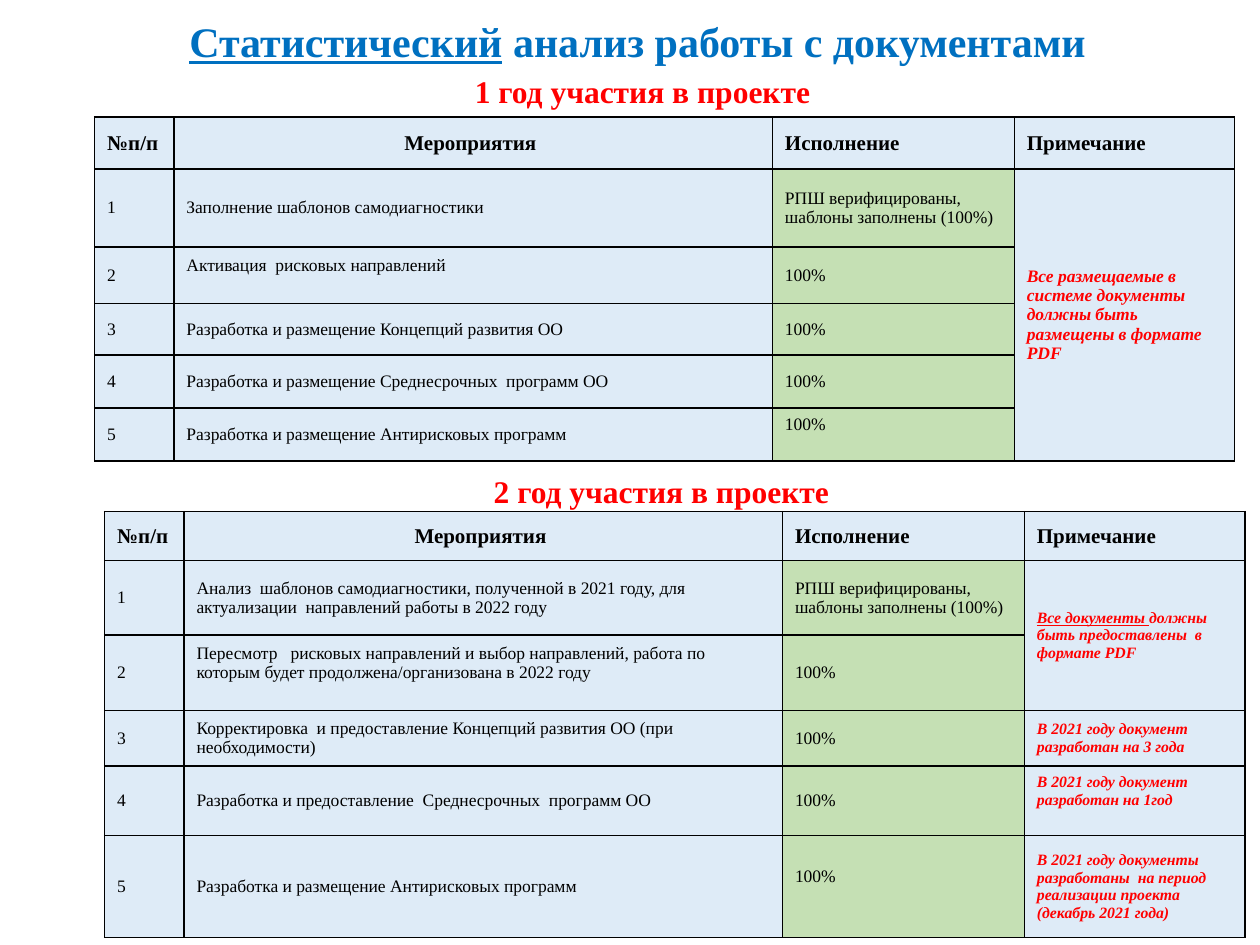
"""Build a slide with two yearly tables on project document statistics."""
from dataclasses import dataclass

import lxml.etree
import pptx
import pptx.dml.color
import pptx.enum.text
import pptx.oxml.ns
import pptx.util
from pptx.util import Inches

ALIGN = pptx.enum.text.PP_ALIGN
ANCHOR = pptx.enum.text.MSO_ANCHOR


@dataclass(frozen=True)
class Theme:
    """Colours, type sizes and measures of the slide."""
    font: str = "Times New Roman"
    blue: str = "0070C0"
    red: str = "FF0000"
    ink: str = "000000"
    pale: str = "DEEBF7"
    green: str = "C5E0B4"
    title: int = 24
    heading: int = 18
    header: int = 12
    body: int = 10
    small: int = 9
    line: float = 1
    columns: tuple = (0.63, 4.75, 1.92, 1.75)
    raised_margin: float = 0.2


THEME = Theme()
HEADER = ("№п/п", "Мероприятия ", "Исполнение", "Примечание")
VERIFIED = "РПШ верифицированы, шаблоны заполнены (100%)"
DONE = "100%"

FIRST_YEAR = {
    "heights": (0.41, 0.62, 0.45, 0.41, 0.42, 0.42),
    "activities": (
        "Заполнение шаблонов самодиагностики",
        "Активация  рисковых направлений",
        "Разработка и размещение Концепций развития ОО",
        "Разработка и размещение Среднесрочных  программ ОО",
        "Разработка и размещение Антирисковых программ",
    ),
    "notes": [
        (1, 5, "", "Все размещаемые в системе документы должны быть размещены в формате PDF"),
    ],
    "note_size": THEME.body,
    "raised": {(2, 1), (5, 2)},
}
SECOND_YEAR = {
    "heights": (0.39, 0.59, 0.6, 0.44, 0.55, 0.81),
    "activities": (
        "Анализ  шаблонов самодиагностики, полученной в 2021 году, для "
        "актуализации  направлений работы в 2022 году",
        "Пересмотр   рисковых направлений и выбор направлений, работа по "
        "которым будет продолжена/организована в 2022 году",
        "Корректировка  и предоставление Концепций развития ОО (при необходимости)",
        "Разработка и предоставление  Среднесрочных  программ ОО",
        "Разработка и размещение Антирисковых программ",
    ),
    "notes": [
        (1, 2, "Все документы ", "должны быть предоставлены  в формате PDF"),
        (3, 1, "", "В 2021 году документ разработан на 3 года"),
        (4, 1, "", "В 2021 году документ разработан на 1год"),
        (5, 1, "", "В 2021 году документы разработаны  на период реализации "
                   "проекта (декабрь 2021 года)"),
    ],
    "note_size": THEME.small,
    "raised": {(2, 1), (4, 3), (5, 2)},
}


def write(paragraph, text, size, colour, underlined="", **formats):
    """Add text, with an optional underlined lead, to a paragraph."""
    for words, underline in ((underlined, True), (text, False)):
        if not words:
            continue
        run = paragraph.add_run()
        run.text = words
        values = {"name": THEME.font, "size": pptx.util.Pt(size),
                  "underline": underline, **formats}
        for attribute, value in values.items():
            setattr(run.font, attribute, value)
        run.font.color.rgb = pptx.dml.color.RGBColor.from_string(colour)


def add_line(slide, box, text, size, colour, underlined="", **layout):
    """Place one bold line of text in a box and return its paragraph."""
    frame = slide.shapes.add_textbox(*map(Inches, box)).text_frame
    for attribute, value in {"word_wrap": True, **layout}.items():
        setattr(frame, attribute, value)
    paragraph = frame.paragraphs[0]
    write(paragraph, text, size, colour, underlined, bold=True)
    return paragraph


def style_cell(cell, fill):
    """Give a cell its borders, fill and vertical centring."""
    properties = cell._tc.get_or_add_tcPr()
    qn = pptx.oxml.ns.qn
    for side in ("a:lnL", "a:lnR", "a:lnT", "a:lnB"):
        border = lxml.etree.SubElement(
            properties, qn(side), w=str(pptx.util.Pt(THEME.line)))
        solid = lxml.etree.SubElement(border, qn("a:solidFill"))
        lxml.etree.SubElement(solid, qn("a:srgbClr"), val=THEME.ink)
    cell.fill.solid()
    cell.fill.fore_color.rgb = pptx.dml.color.RGBColor.from_string(fill)
    cell.vertical_anchor = ANCHOR.MIDDLE


def add_year_table(slide, left, top, year):
    """Place the table of one project year at the given corner."""
    heights, widths = year["heights"], THEME.columns
    table = slide.shapes.add_table(
        len(heights), len(widths), Inches(left), Inches(top),
        Inches(sum(widths)), Inches(sum(heights))).table
    table.first_row = table.horz_banding = False
    for column, width in zip(table.columns, widths):
        column.width = Inches(width)
    for row, height in zip(table.rows, heights):
        row.height = Inches(height)

    for row in range(len(heights)):
        for column in range(len(widths)):
            result = row > 0 and column == 2
            style_cell(table.cell(row, column), THEME.green if result else THEME.pale)
    for row, column in year["raised"]:
        table.cell(row, column).margin_bottom = Inches(THEME.raised_margin)

    for column, label in enumerate(HEADER):
        paragraph = table.cell(0, column).text_frame.paragraphs[0]
        paragraph.alignment = ALIGN.CENTER if column == 1 else ALIGN.LEFT
        write(paragraph, label, THEME.header, THEME.ink, bold=True)
    for number, activity in enumerate(year["activities"], 1):
        result = VERIFIED if number == 1 else DONE
        for column, text in enumerate((str(number), activity, result)):
            write(table.cell(number, column).text_frame.paragraphs[0],
                  text, THEME.body, THEME.ink, bold=False)
    for row, span, lead, note in year["notes"]:
        cell = table.cell(row, 3)
        if span > 1:
            cell.merge(table.cell(row + span - 1, 3))
        write(cell.text_frame.paragraphs[0], note, year["note_size"], THEME.red,
              lead, bold=True, italic=True)


def add_title(slide, box):
    """Place the centred slide title in a box."""
    title = add_line(slide, box, " анализ работы с документами", THEME.title,
                     THEME.blue, "Статистический", vertical_anchor=ANCHOR.MIDDLE)
    title.alignment = ALIGN.CENTER
    title.line_spacing = 0.9


def main():
    """Build and save the slide."""
    deck = pptx.Presentation()
    deck.slide_width, deck.slide_height = Inches(10), Inches(7.5)
    slide = deck.slides.add_slide(deck.slide_layouts[6])
    add_title(slide, (0.75, 0.13, 8.62, 0.44))
    add_year_table(slide, 0.75, 0.93, FIRST_YEAR)
    add_line(slide, (3.67, 0.52, 3.62, 0.4), "1 год участия в проекте",
             THEME.heading, THEME.red)
    add_line(slide, (3.82, 3.7, 2.89, 0.4), "2 год участия в проекте",
             THEME.heading, THEME.red)
    add_year_table(slide, 0.83, 4.06, SECOND_YEAR)
    deck.save("out.pptx")


if __name__ == "__main__":
    main()
